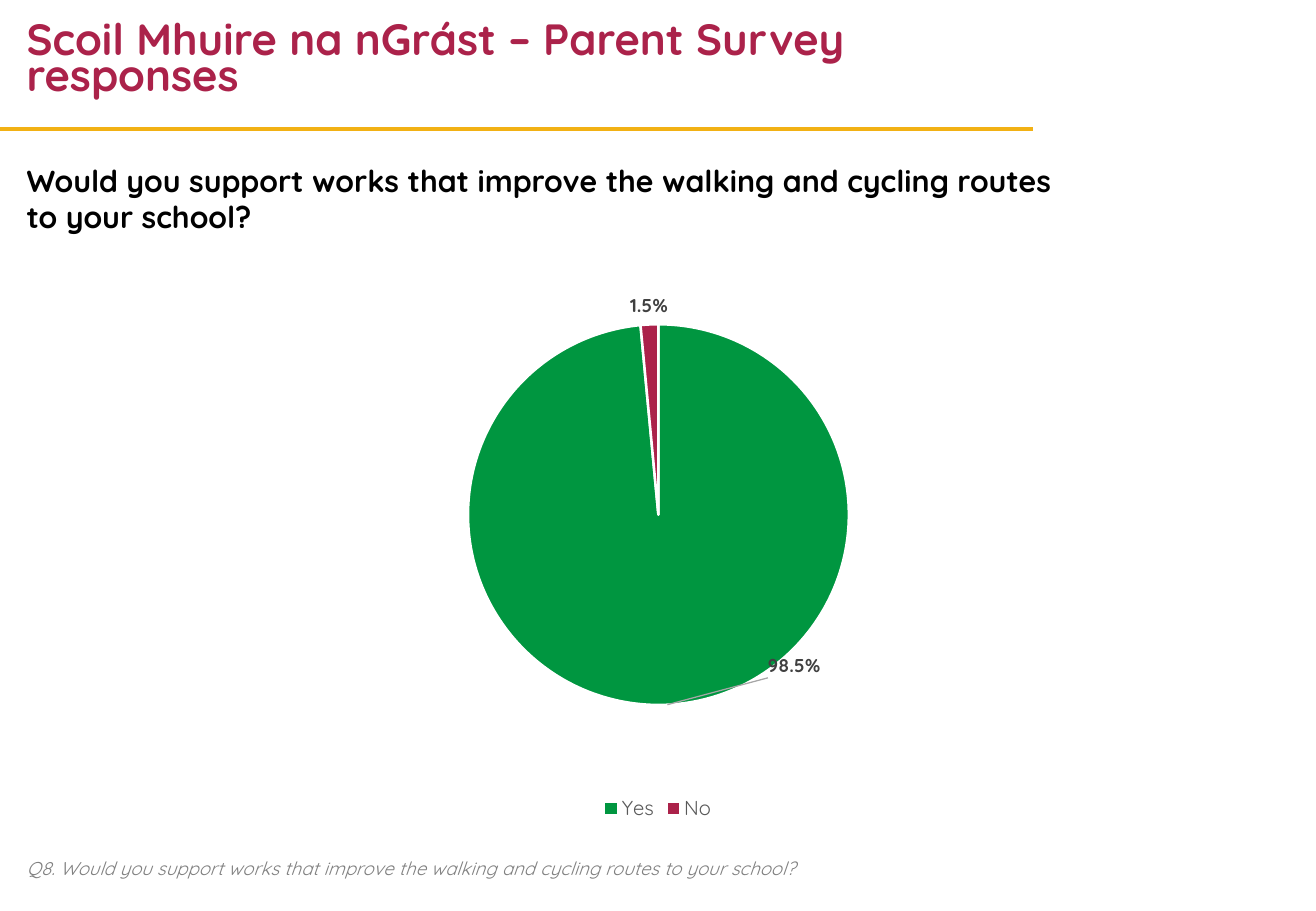
"""Builds the parent survey slide with its pie of support for better routes."""
from dataclasses import dataclass

import lxml.etree
import pptx
import pptx.chart.chart
import pptx.chart.data
import pptx.dml.color
import pptx.enum.chart
import pptx.enum.shapes
import pptx.enum.text
import pptx.oxml
import pptx.oxml.ns
import pptx.slide
import pptx.util

PX = 9144
RGB = pptx.dml.color.RGBColor.from_string


@dataclass(frozen=True)
class Theme:
    face: str = "Quicksand"
    red: str = "AB224A"
    gold: str = "F2B114"
    green: str = "009640"
    black: str = "000000"
    white: str = "FFFFFF"
    dark: str = "404040"
    mid: str = "595959"
    grey: str = "808080"
    pale: str = "A6A6A6"
    title: float = 25.9
    head: float = 18
    note: float = 11
    key: float = 12
    label: float = 11
    base: float = 10


@dataclass(frozen=True)
class Label:
    text: str
    box: tuple[int, int, int, int]
    size: float
    color: str
    bold: bool = False
    italic: bool = False
    space: float = 1.0


@dataclass(frozen=True)
class Slice:
    name: str
    value: float
    color: str


THEME = Theme()
LABELS = [
    Label("Scoil Mhuire na nGrást – Parent Survey responses",
          (12, 12, 831, 79), THEME.title, THEME.red, bold=True, space=0.7),
    Label("Would you support works that improve the walking and cycling "
          "routes to your school?",
          (12, 126, 866, 75), THEME.head, THEME.black, bold=True),
    Label("Q8. Would you support works that improve the walking and cycling "
          "routes to your school?",
          (12, 700, 688, 29), THEME.note, THEME.grey, italic=True),
]
SLICES = [Slice("Yes", 0.985, THEME.green), Slice("No", 0.015, THEME.red)]


def px(count: int) -> pptx.util.Emu:
    """Turn px into EMU."""
    return pptx.util.Emu(count * PX)


def style(font, size: float, color: str, bold: bool = False,
          italic: bool = False) -> None:
    """Set the face, size, colour and weight of a font."""
    font.name = THEME.face
    font.size = pptx.util.Pt(size)
    font.color.rgb = RGB(color)
    font.bold = bold
    font.italic = italic


def node(body: str):
    """Parse a chart element, given without its namespaces."""
    head, rest = body.split(">", 1)
    return pptx.oxml.parse_xml(
        f"{head} {pptx.oxml.ns.nsdecls('c', 'a')}>{rest}")


def layout(**parts: float | str):
    """Build a manual layout element from its parts in order."""
    rows = "".join(f'<c:{k} val="{v}"/>' for k, v in parts.items())
    return node(f"<c:layout><c:manualLayout>{rows}"
                "</c:manualLayout></c:layout>")


def add_label(slide: pptx.slide.Slide, item: Label) -> None:
    """Add one text box."""
    frame = slide.shapes.add_textbox(*map(px, item.box)).text_frame
    frame.word_wrap = True
    frame.vertical_anchor = pptx.enum.text.MSO_ANCHOR.MIDDLE
    para = frame.paragraphs[0]
    para.text = item.text
    para.line_spacing = item.space
    style(para.font, item.size, item.color, item.bold, item.italic)


def add_rule(slide: pptx.slide.Slide) -> None:
    """Add the gold rule under the title."""
    rule = slide.shapes.add_connector(
        pptx.enum.shapes.MSO_CONNECTOR.STRAIGHT,
        px(0), px(106), px(850), px(106))
    rule.line.color.rgb = RGB(THEME.gold)
    rule.line.width = pptx.util.Pt(2.25)
    lxml.etree.SubElement(rule._element.spPr,
                          pptx.oxml.ns.qn("a:effectLst"))


def add_tags(chart: pptx.chart.chart.Chart) -> None:
    """Show the values, with the first one moved along a leader line."""
    series = chart.plots[0].series[0]
    outer = pptx.enum.chart.XL_LABEL_POSITION.OUTSIDE_END
    tags = series.data_labels
    tags.number_format = "0.0%"
    tags.number_format_is_linked = False
    tags.show_value = True
    tags.show_percentage = False
    moved = series.points[0].data_label
    for tag in (tags, moved):
        tag.position = outer
        style(tag.font, THEME.label, THEME.dark, bold=True)
    index = tags._element.find(pptx.oxml.ns.qn("c:dLbl"))[0]
    index.addnext(layout(x=0.23, y=-0.1))
    index.getnext().addnext(
        node('<c:numFmt formatCode="0.0%" sourceLinked="0"></c:numFmt>'))
    for old in tags._element.findall(pptx.oxml.ns.qn("c:showLeaderLines")):
        tags._element.remove(old)
    tags._element.append(
        node('<c:showLeaderLines val="1"></c:showLeaderLines>'))
    tags._element.append(node(
        '<c:leaderLines><c:spPr><a:ln w="9525"><a:solidFill>'
        f'<a:srgbClr val="{THEME.pale}"/></a:solidFill></a:ln></c:spPr>'
        '</c:leaderLines>'))


def add_pie(slide: pptx.slide.Slide) -> None:
    """Add the pie chart of answers."""
    data = pptx.chart.data.CategoryChartData(number_format="0.0%")
    data.categories = [part.name for part in SLICES]
    data.add_series("Series 1", [part.value for part in SLICES])
    chart = slide.shapes.add_chart(
        pptx.enum.chart.XL_CHART_TYPE.PIE,
        px(315), px(201), px(453), px(479), data).chart
    chart.has_title = False
    style(chart.font, THEME.base, THEME.black)
    chart.has_legend = True
    chart.legend.position = pptx.enum.chart.XL_LEGEND_POSITION.BOTTOM
    chart.legend.include_in_layout = False
    style(chart.legend.font, THEME.key, THEME.mid)
    plot = chart.plots[0]
    plot.vary_by_categories = True
    for index, part in enumerate(SLICES):
        form = plot.series[0].points[index].format
        form.fill.solid()
        form.fill.fore_color.rgb = RGB(part.color)
        form.line.color.rgb = RGB(THEME.white)
        form.line.width = pptx.util.Pt(1.5)
    add_tags(chart)
    area = chart._chartSpace.chart.plotArea
    for old in area.findall(pptx.oxml.ns.qn("c:layout")):
        area.remove(old)
    area.insert(0, layout(layoutTarget="inner", xMode="edge", yMode="edge",
                          x=0.155, y=0.09, w=0.692, h=0.75))


def main() -> None:
    """Build and save the slide."""
    deck = pptx.Presentation()
    deck.slide_width, deck.slide_height = px(1083), px(750)
    slide = deck.slides.add_slide(deck.slide_layouts[6])
    add_rule(slide)
    for item in LABELS:
        add_label(slide, item)
    add_pie(slide)
    deck.save("out.pptx")


if __name__ == "__main__":
    main()
